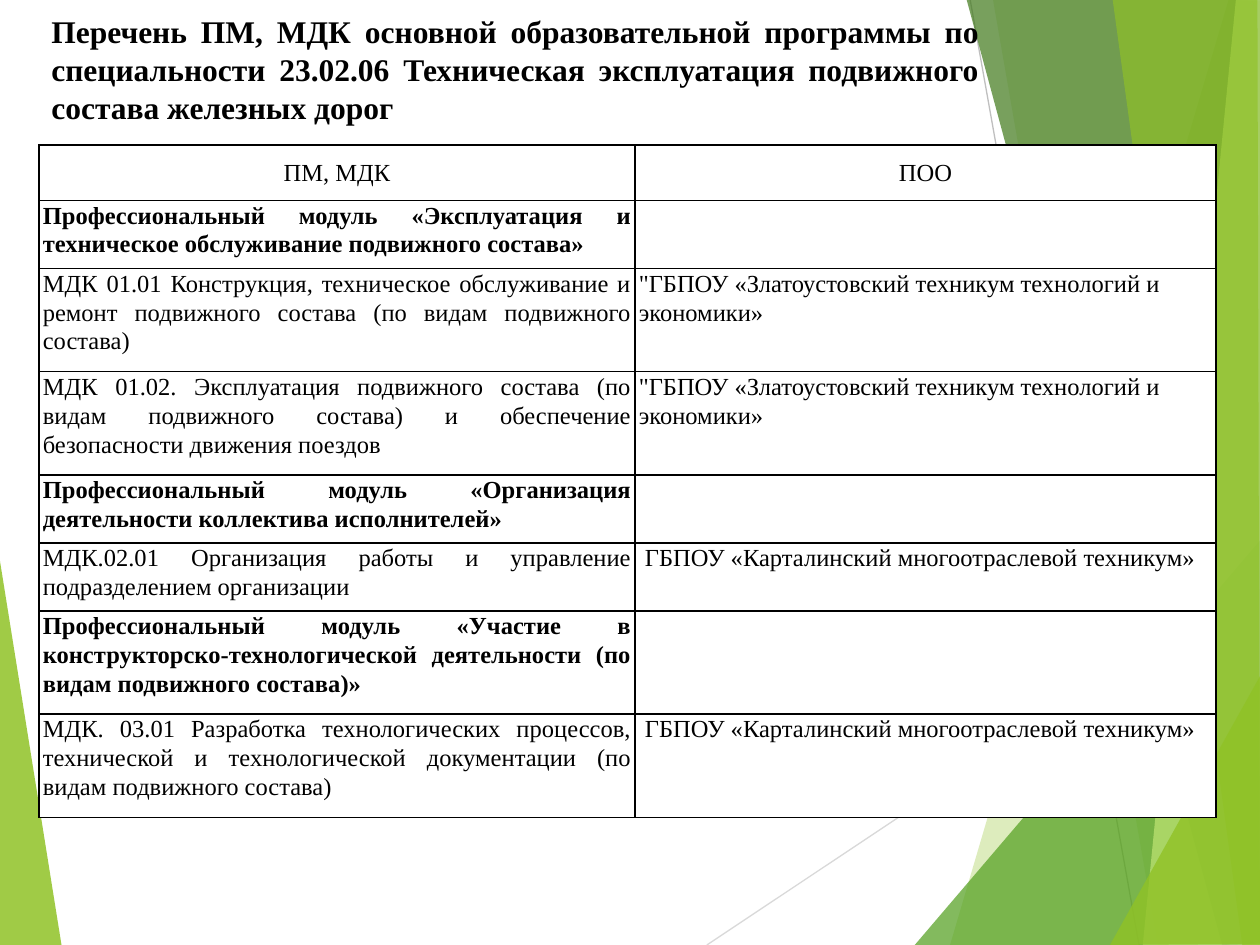
from lxml import etree
from pptx import Presentation
from pptx.dml.color import RGBColor
from pptx.enum.shapes import MSO_CONNECTOR
from pptx.enum.text import MSO_ANCHOR, PP_ALIGN
from pptx.oxml.ns import qn
from pptx.util import Inches, Pt

STRAIGHT = MSO_CONNECTOR.STRAIGHT
TOP, MIDDLE = MSO_ANCHOR.TOP, MSO_ANCHOR.MIDDLE
LEFT, CENTER, JUSTIFY = PP_ALIGN.LEFT, PP_ALIGN.CENTER, PP_ALIGN.JUSTIFY

FONT = "Times New Roman"
COLORS = {
    "text": "000000", "paper": "FFFFFF", "border": "000000",
    "lime": "90C226", "green": "54A021", "forest": "3F7819", "pale": "C0E474",
    "light_ray": "D9D9D9", "dark_ray": "BFBFBF",
}

LEFT_WEDGE = ("lime", 85, [(-0.01, 4.39), (0.49, 7.51), (-0.01, 7.5)])
RAYS = [
    ("light_ray", (5.61, 7.5), (10.01, 4.57)),
    ("dark_ray", (7.7, 0), (9.04, 7.5)),
]
# Colour, opacity in percent, corner points in inches
RIGHT_FACETS = [
    ("lime", 30, [(9.75, 0), (7.54, 7.5), (10.02, 7.51), (10.01, 0.01)]),
    ("lime", 20, [(7.88, -0.01), (9.19, 7.5), (10.01, 7.5), (10.01, -0.01)]),
    ("green", 72, [(7.26, 7.5), (10, 4.29), (10.01, 7.5)]),
    ("forest", 70, [(7.67, -0.01), (9.7, 7.5), (10.01, 7.49), (10.01, -0.01)]),
    ("pale", 70, [(9.81, -0.01), (9.07, 7.5), (10.01, 7.5), (10, -0.01)]),
    ("lime", 65, [(8.83, -0.01), (9.86, 7.5), (10, 7.5), (9.98, -0.01)]),
    ("lime", 80, [(8.81, 7.5), (10.01, 5.35), (10.01, 7.49)]),
]

TITLE = ("Перечень ПМ, МДК основной образовательной программы по специальности "
         "23.02.06 Техническая эксплуатация подвижного состава железных дорог")
ZLATOUST = '"ГБПОУ «Златоустовский техникум технологий и экономики»'
KARTALY = " ГБПОУ «Карталинский многоотраслевой техникум»"
HEADER = ("ПМ, МДК", "ПОО")
# Module or course, college (empty for a module), row height in inches
COURSES = [
    ("Профессиональный модуль «Эксплуатация и техническое обслуживание "
     "подвижного состава»", "", 0.54),
    ("МДК 01.01 Конструкция, техническое обслуживание и ремонт подвижного "
     "состава (по видам подвижного состава)", ZLATOUST, 0.82),
    ("МДК 01.02. Эксплуатация подвижного состава (по видам подвижного состава) "
     "и обеспечение безопасности движения поездов", ZLATOUST, 0.82),
    ("Профессиональный модуль «Организация деятельности коллектива "
     "исполнителей»", "", 0.54),
    ("МДК.02.01 Организация работы и управление подразделением организации",
     KARTALY, 0.54),
    ("Профессиональный модуль «Участие в конструкторско-технологической "
     "деятельности (по видам подвижного состава)»", "", 0.82),
    ("МДК. 03.01 Разработка технологических процессов, технической и "
     "технологической документации (по видам подвижного состава)", KARTALY, 0.82),
]
HEADER_HEIGHT = 0.44
COLUMN_WIDTHS = (4.73, 4.61)


def rgb(name):
    return RGBColor.from_string(COLORS[name])


def add_facet(slide, color, opacity, corners):
    """Draw a borderless translucent polygon."""
    points = [(Inches(x), Inches(y)) for x, y in corners]
    builder = slide.shapes.build_freeform(*points[0])
    builder.add_line_segments(points[1:], close=True)
    facet = builder.convert_to_shape()
    facet.shadow.inherit = False
    facet.line.fill.background()
    facet.fill.solid()
    facet.fill.fore_color.rgb = rgb(color)
    tint = facet.fill._xPr.find(f"{qn('a:solidFill')}/{qn('a:srgbClr')}")
    etree.SubElement(tint, qn("a:alpha"), val=str(opacity * 1000))


def add_ray(slide, color, start, end):
    ends = [Inches(value) for value in start + end]
    ray = slide.shapes.add_connector(STRAIGHT, *ends)
    ray.line.color.rgb = rgb(color)
    ray.line.width = Pt(0.75)
    etree.SubElement(ray._element.spPr, qn("a:effectLst"))


def write(text_frame, text, size, bold, align):
    text_frame.text = text
    paragraph = text_frame.paragraphs[0]
    paragraph.alignment = align
    for font in [paragraph.font] + [run.font for run in paragraph.runs]:
        font.name = FONT
        font.size = Pt(size)
        font.bold = bold
        font.color.rgb = rgb("text")
    return paragraph


def add_title(slide):
    title = slide.shapes.add_textbox(Inches(0.31), Inches(0.05), Inches(7.56), Inches(1.44))
    title.text_frame.word_wrap = True
    title.text_frame.vertical_anchor = TOP
    write(title.text_frame, TITLE, 18, True, JUSTIFY)


def add_borders(cell):
    properties = cell._tc.get_or_add_tcPr()
    for index, side in enumerate(("a:lnL", "a:lnR", "a:lnT", "a:lnB")):
        border = etree.Element(qn(side), w=str(Pt(1)))
        fill = etree.SubElement(border, qn("a:solidFill"))
        etree.SubElement(fill, qn("a:srgbClr"), val=COLORS["border"])
        properties.insert(index, border)


def fill_cell(cell, text, align, bold=False, anchor=TOP):
    cell.margin_left = cell.margin_right = Inches(0.03)
    cell.margin_top = cell.margin_bottom = 0
    cell.vertical_anchor = anchor
    cell.fill.solid()
    cell.fill.fore_color.rgb = rgb("paper")
    add_borders(cell)
    write(cell.text_frame, text, 14, bold, align).line_spacing = 1.07


def add_course_table(slide):
    heights = [HEADER_HEIGHT] + [height for _, _, height in COURSES]
    table = slide.shapes.add_table(
        len(heights), len(COLUMN_WIDTHS), Inches(0.31), Inches(1.15),
        Inches(sum(COLUMN_WIDTHS)), Inches(sum(heights))).table
    for column, width in zip(table.columns, COLUMN_WIDTHS):
        column.width = Inches(width)
    for row, height in zip(table.rows, heights):
        row.height = Inches(height)
    for column, heading in enumerate(HEADER):
        fill_cell(table.cell(0, column), heading, CENTER, anchor=MIDDLE)
    for row, (course, college, _) in enumerate(COURSES, start=1):
        fill_cell(table.cell(row, 0), course, JUSTIFY, bold=not college)
        fill_cell(table.cell(row, 1), college, LEFT)


def main():
    presentation = Presentation()
    presentation.slide_width = Inches(10)
    presentation.slide_height = Inches(7.5)
    slide = presentation.slides.add_slide(presentation.slide_layouts[6])
    add_facet(slide, *LEFT_WEDGE)
    for ray in RAYS:
        add_ray(slide, *ray)
    for facet in RIGHT_FACETS:
        add_facet(slide, *facet)
    add_title(slide)
    add_course_table(slide)
    presentation.save("out.pptx")


if __name__ == "__main__":
    main()
